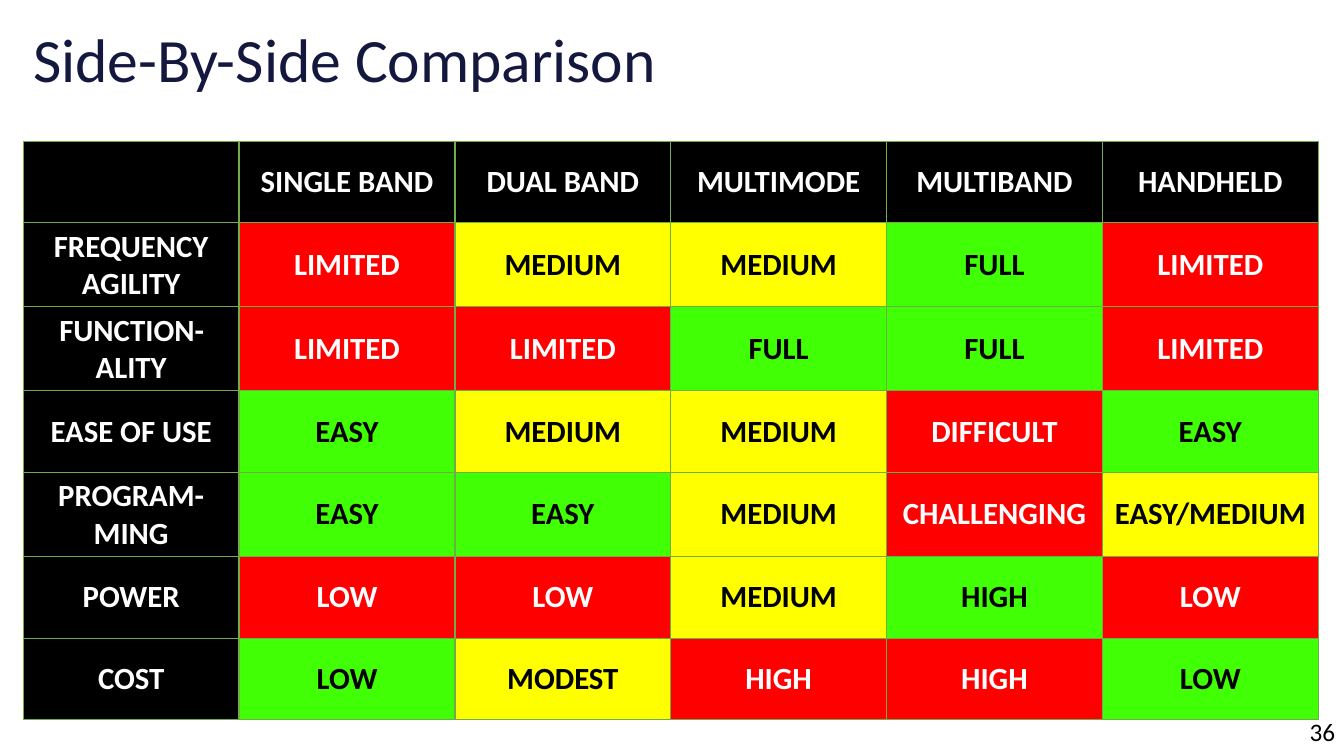
from dataclasses import dataclass

from lxml import etree
from pptx import Presentation
from pptx.dml.color import RGBColor
from pptx.enum.text import MSO_ANCHOR, PP_ALIGN
from pptx.oxml.ns import qn
from pptx.util import Inches, Pt

LEFT, CENTER, RIGHT = PP_ALIGN.LEFT, PP_ALIGN.CENTER, PP_ALIGN.RIGHT
TOP, MIDDLE = MSO_ANCHOR.TOP, MSO_ANCHOR.MIDDLE

SLIDE_WIDTH, SLIDE_HEIGHT = Inches(13.33), Inches(7.5)
BLANK_LAYOUT = 6


@dataclass(frozen=True)
class Theme:
    font: str = "Calibri"
    title_size: int = 44
    table_size: int = 22
    number_size: int = 18
    border_width: int = 1
    navy: str = "14183F"
    black: str = "000000"
    white: str = "FFFFFF"
    border: str = "70AD47"
    good: str = "41FF05"
    fair: str = "FFFF00"
    poor: str = "FF0000"


THEME = Theme()

# Rating marks: + good, o fair, - poor; each gives (fill, text) colours.
RATING_COLORS = {
    "+": (THEME.good, THEME.black),
    "o": (THEME.fair, THEME.black),
    "-": (THEME.poor, THEME.white),
}
LABEL_COLORS = (THEME.black, THEME.white)

RADIO_TYPES = ["", "SINGLE BAND", "DUAL BAND", "MULTIMODE", "MULTIBAND", "HANDHELD"]
COMPARISON = [
    ("FREQUENCY AGILITY", "-oo+-", ["LIMITED", "MEDIUM", "MEDIUM", "FULL", "LIMITED"]),
    ("FUNCTION-ALITY", "--++-", ["LIMITED", "LIMITED", "FULL", "FULL", "LIMITED"]),
    ("EASE OF USE", "+oo-+", ["EASY", "MEDIUM", "MEDIUM", "DIFFICULT", "EASY"]),
    ("PROGRAM-MING", "++o-o", ["EASY", "EASY", "MEDIUM", "CHALLENGING", "EASY/MEDIUM"]),
    ("POWER", "--o+-", ["LOW", "LOW", "MEDIUM", "HIGH", "LOW"]),
    ("COST", "+o--+", ["LOW", "MODEST", "HIGH", "HIGH", "LOW"]),
]


def across(percent):
    return round(SLIDE_WIDTH * percent / 100)


def down(percent):
    return round(SLIDE_HEIGHT * percent / 100)


def add_run(paragraph, text, size, color, bold=False):
    run = paragraph.add_run()
    run.text = text
    run.font.name = THEME.font
    run.font.size = Pt(size)
    run.font.bold = bold
    run.font.color.rgb = RGBColor.from_string(color)


def add_text(slide, box, text, size, color, align=LEFT, anchor=TOP, line_spacing=1.0):
    """Add a text box; box is left, top, width, height in percent of the slide."""
    left, top, width, height = box
    shape = slide.shapes.add_textbox(across(left), down(top), across(width), down(height))
    frame = shape.text_frame
    frame.word_wrap = True
    frame.vertical_anchor = anchor
    paragraph = frame.paragraphs[0]
    paragraph.alignment = align
    paragraph.line_spacing = line_spacing
    add_run(paragraph, text, size, color)


def add_borders(cell):
    properties = cell._tc.get_or_add_tcPr()
    for side in ("lnL", "lnR", "lnT", "lnB"):
        line = etree.SubElement(properties, qn(f"a:{side}"), w=str(Pt(THEME.border_width)))
        fill = etree.SubElement(line, qn("a:solidFill"))
        etree.SubElement(fill, qn("a:srgbClr"), val=THEME.border)


def fill_cell(cell, text, colors):
    fill_color, text_color = colors
    add_borders(cell)
    cell.fill.solid()
    cell.fill.fore_color.rgb = RGBColor.from_string(fill_color)
    cell.vertical_anchor = MIDDLE
    paragraph = cell.text_frame.paragraphs[0]
    paragraph.alignment = CENTER
    if text:
        add_run(paragraph, text, THEME.table_size, text_color, bold=True)


def add_comparison_table(slide, left, top, column_width, row_height):
    rows, columns = len(COMPARISON) + 1, len(RADIO_TYPES)
    frame = slide.shapes.add_table(
        rows, columns, across(left), down(top),
        across(column_width * columns), down(row_height * rows))
    table = frame.table
    table.horz_banding = False
    for column in table.columns:
        column.width = across(column_width)
    for row in table.rows:
        row.height = down(row_height)
    for index, radio_type in enumerate(RADIO_TYPES):
        fill_cell(table.cell(0, index), radio_type, LABEL_COLORS)
    for row_index, (feature, marks, ratings) in enumerate(COMPARISON, start=1):
        fill_cell(table.cell(row_index, 0), feature, LABEL_COLORS)
        for index, (mark, rating) in enumerate(zip(marks, ratings), start=1):
            fill_cell(table.cell(row_index, index), rating, RATING_COLORS[mark])


def main():
    presentation = Presentation()
    presentation.slide_width, presentation.slide_height = SLIDE_WIDTH, SLIDE_HEIGHT
    slide = presentation.slides.add_slide(presentation.slide_layouts[BLANK_LAYOUT])
    add_text(slide, (94.97, 94.13, 5.1, 5.33), "36", THEME.number_size, THEME.black,
             align=RIGHT)
    add_text(slide, (1.73, 0, 86.27, 16.67), "Side-By-Side Comparison",
             THEME.title_size, THEME.navy, anchor=MIDDLE, line_spacing=0.9)
    add_comparison_table(slide, left=1.73, top=18.67, column_width=16.06, row_height=10.8)
    presentation.save("out.pptx")


if __name__ == "__main__":
    main()
